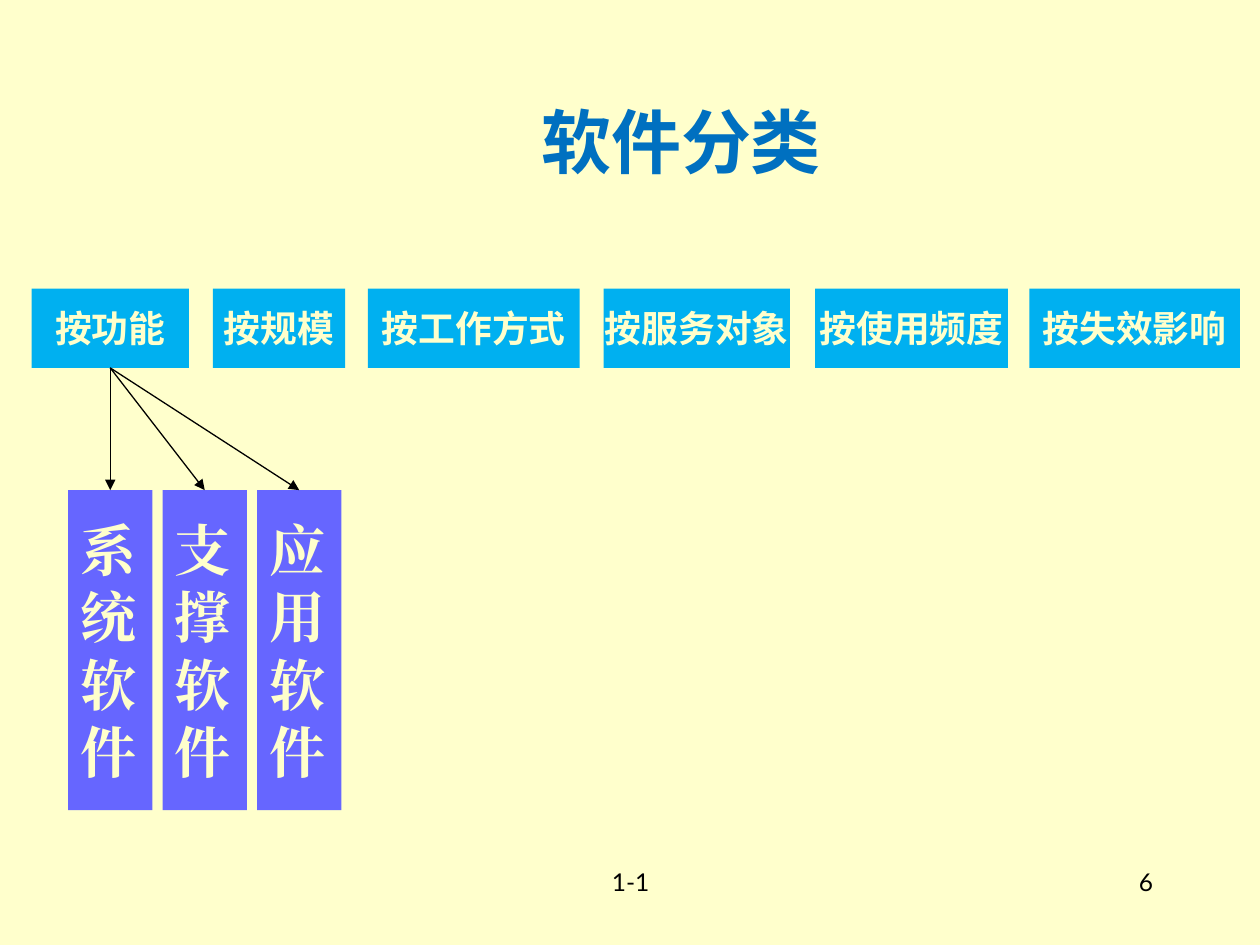
from dataclasses import dataclass

from lxml.etree import SubElement
from pptx import Presentation
from pptx.dml.color import RGBColor
from pptx.enum.shapes import MSO_CONNECTOR, MSO_SHAPE
from pptx.enum.text import MSO_ANCHOR, PP_ALIGN
from pptx.oxml.ns import qn
from pptx.util import Inches, Pt

COLORS = {
    "background": "FFFFCC",
    "title": "0070C0",
    "criterion": "00B0F0",
    "category": "6666FF",
    "light": "FFFFCC",
    "black": "000000",
}
SANS, SERIF, LATIN = "Noto Sans CJK SC", "Times New Roman", "Lato"


@dataclass
class Style:
    size: int
    font: str
    color: str
    bold: bool = True
    align: PP_ALIGN = PP_ALIGN.CENTER


@dataclass
class Box:
    left: float
    top: float
    width: float
    height: float
    lines: list[str]


TITLE = Style(40, SANS, "title")
CRITERION = Style(21, SANS, "light")
CATEGORY = Style(32, SERIF, "light", align=PP_ALIGN.LEFT)
FOOTER = Style(14, LATIN, "black", bold=False)
NUMBER = Style(14, LATIN, "black", bold=False, align=PP_ALIGN.RIGHT)

CRITERIA = [
    Box(left, 2.29, width, 0.63, [label])
    for left, width, label in [
        (0.25, 1.25, "按功能"),
        (1.69, 1.05, "按规模"),
        (2.92, 1.68, "按工作方式"),
        (4.79, 1.48, "按服务对象"),
        (6.47, 1.53, "按使用频度"),
        (8.17, 1.67, "按失效影响"),
    ]
]
CATEGORIES = [
    Box(0.54 + 0.75 * i, 3.89, 0.67, 2.54, list(name))
    for i, name in enumerate(["系统软件", "支撑软件", "应用软件"])
]


def rgb(name: str) -> RGBColor:
    return RGBColor.from_string(COLORS[name])


def write(tf, lines: list[str], style: Style) -> None:
    for i, line in enumerate(lines):
        p = tf.paragraphs[0] if i == 0 else tf.add_paragraph()
        p.alignment = style.align
        p.space_before = Pt(0)
        r = p.add_run()
        r.text = line
        r.font.size = Pt(style.size)
        r.font.bold = style.bold
        r.font.name = style.font
        r.font.color.rgb = rgb(style.color)
        SubElement(r.font._element, qn("a:ea")).set("typeface", style.font)


def frame(box: Box) -> list:
    return [Inches(v) for v in (box.left, box.top, box.width, box.height)]


def add_box(s, box: Box, fill: str, style: Style):
    sp = s.shapes.add_shape(MSO_SHAPE.RECTANGLE, *frame(box))
    sp.shadow.inherit = False
    sp.fill.solid()
    sp.fill.fore_color.rgb = rgb(fill)
    sp.line.fill.background()
    tf = sp.text_frame
    tf.word_wrap = False
    tf.vertical_anchor = MSO_ANCHOR.MIDDLE
    write(tf, box.lines, style)
    return sp


def add_label(s, box: Box, style: Style) -> None:
    tf = s.shapes.add_textbox(*frame(box)).text_frame
    tf.word_wrap = True
    write(tf, box.lines, style)


def add_arrow(s, parent, child) -> None:
    c = s.shapes.add_connector(MSO_CONNECTOR.STRAIGHT, 0, 0, 0, 0)
    c.begin_connect(parent, 2)
    c.end_connect(child, 0)
    c.line.color.rgb = rgb("black")
    c.line.width = Pt(0.75)
    SubElement(c.line._get_or_add_ln(), qn("a:tailEnd")).set("type", "triangle")
    SubElement(c._element.spPr, qn("a:effectLst"))


def main() -> None:
    prs = Presentation()
    prs.slide_width, prs.slide_height = Inches(10), Inches(7.5)
    s = prs.slides.add_slide(prs.slide_layouts[5])
    s.background.fill.solid()
    s.background.fill.fore_color.rgb = rgb("background")

    title = s.shapes.title
    title.left, title.top, title.width, title.height = frame(
        Box(2.69, 0.76, 5.43, 0.71, [])
    )
    title.text_frame.vertical_anchor = MSO_ANCHOR.MIDDLE
    write(title.text_frame, ["软件分类"], TITLE)

    criteria = [add_box(s, box, "criterion", CRITERION) for box in CRITERIA]
    categories = [add_box(s, box, "category", CATEGORY) for box in CATEGORIES]
    for category in categories:
        add_arrow(s, criteria[0], category)

    add_label(s, Box(3.42, 6.83, 3.17, 0.5, ["1-1"]), FOOTER)
    add_label(s, Box(7.17, 6.83, 2.08, 0.5, ["6"]), NUMBER)
    prs.save("out.pptx")


if __name__ == "__main__":
    main()
